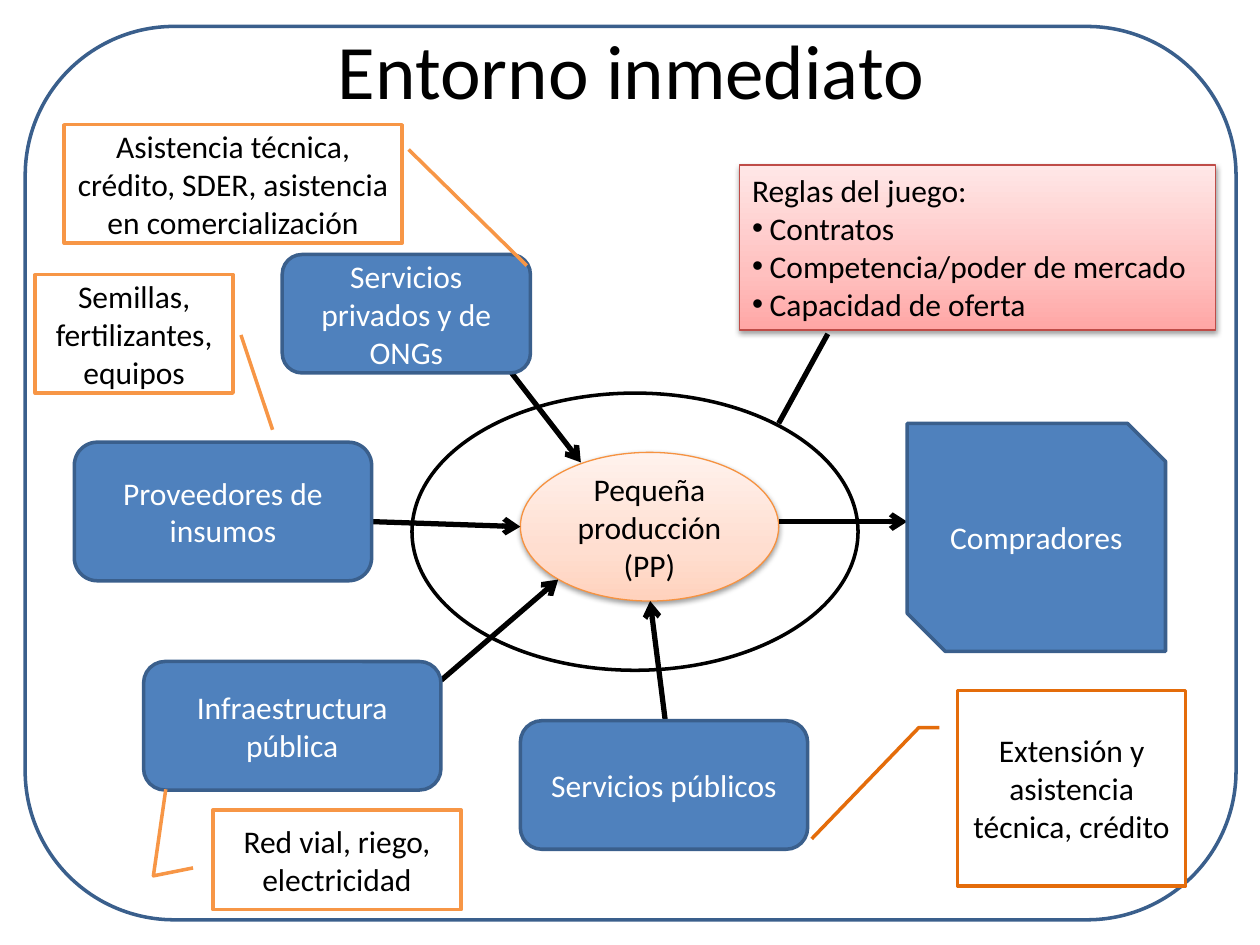
from copy import deepcopy
from dataclasses import dataclass

from lxml import etree
from pptx import Presentation
from pptx.dml.color import RGBColor
from pptx.enum import shapes, text
from pptx.oxml.ns import qn
from pptx.util import Pt

PX = 9144  # 100 px to the inch
SHAPE = shapes.MSO_SHAPE
CENTER, LEFT = text.PP_ALIGN.CENTER, text.PP_ALIGN.LEFT
MIDDLE, TOP = text.MSO_ANCHOR.MIDDLE, text.MSO_ANCHOR.TOP


@dataclass(frozen=True)
class Theme:
    font: str = "Calibri"
    title_size: int = 44
    body_size: int = 18
    black: str = "000000"
    white: str = "FFFFFF"
    blue: str = "4F81BD"
    navy: str = "3A5F8C"
    orange: str = "F79646"
    dark_orange: str = "E46C0A"
    core_line: str = "F69240"
    core_fill: tuple = ("FFD2BD", "FFDED0", "FFF2ED")
    rules_line: str = "BF4C48"
    rules_fill: tuple = ("FFA6A5", "FFC0BF", "FFE7E7")


@dataclass(frozen=True)
class Box:
    left: int
    top: int
    width: int
    height: int

    def inner(self, left, top, width, height):
        return Box(self.left + left, self.top + top, width, height)

    def point(self, x, y):
        return (self.left + x) * PX, (self.top + y) * PX

    def emu(self):
        return [length * PX for length in (self.left, self.top, self.width, self.height)]


THEME = Theme()


def rgb(value):
    return RGBColor.from_string(value)


def write(shape, content, color=THEME.black, size=THEME.body_size, align=CENTER, anchor=MIDDLE):
    frame = shape.text_frame
    frame.word_wrap = True
    frame.vertical_anchor = anchor
    frame.text = content
    for paragraph in frame.paragraphs:
        paragraph.alignment = align
        for run in paragraph.runs:
            run.font.name = THEME.font
            run.font.size = Pt(size)
            run.font.color.rgb = rgb(color)


def add_shape(slide, kind, box, line, fill=None, width=2):
    shape = slide.shapes.add_shape(kind, *box.emu())
    shape.shadow.inherit = False
    shape.line.color.rgb = rgb(line)
    shape.line.width = Pt(width)
    if fill:
        shape.fill.solid()
        shape.fill.fore_color.rgb = rgb(fill)
    else:
        shape.fill.background()
    return shape


def add_raised_shape(slide, kind, box, line, colors):
    """A shape with a three-stop gradient, lightest on top, and a soft shadow."""
    shape = add_shape(slide, kind, box, line, width=0.75)
    shape.fill.gradient()
    shape.fill.gradient_angle = 90
    properties = shape._element.spPr
    stops = properties.find(".//" + qn("a:gsLst"))
    stops.insert(1, deepcopy(stops[0]))
    for stop, position, color in zip(shape.fill.gradient_stops, (0, 0.35, 1), colors):
        stop.position = position
        stop.color.rgb = rgb(color)
    shadow = etree.SubElement(properties.find(qn("a:effectLst")), qn("a:outerShdw"),
                              blurRad="40000", dist="20000", dir="5400000", rotWithShape="0")
    shade = etree.SubElement(shadow, qn("a:srgbClr"), val=THEME.black)
    etree.SubElement(shade, qn("a:alpha"), val="38000")
    return shape


def add_line(slide, start, end, arrow=False):
    connector = slide.shapes.add_connector(shapes.MSO_CONNECTOR.STRAIGHT, *start, *end)
    connector.line.color.rgb = rgb(THEME.black)
    connector.line.width = Pt(3)
    if arrow:
        etree.SubElement(connector.line._get_or_add_ln(), qn("a:tailEnd"), type="arrow")
    etree.SubElement(connector._element.spPr, qn("a:effectLst"))


def draw_frame(slide, box):
    # Rounded border and title
    add_shape(slide, SHAPE.ROUNDED_RECTANGLE, box, THEME.navy)
    title = slide.shapes.add_textbox(*box.inner(31, -21, 900, 109).emu())
    write(title, "Entorno inmediato", size=THEME.title_size)


def draw_network(slide, box):
    # Small producers at the centre
    core = add_raised_shape(slide, SHAPE.OVAL, box.inner(354, 157, 205, 118),
                            THEME.core_line, THEME.core_fill)
    write(core, "Pequeña producción (PP)")

    # Arrows to and from the centre
    for start, end in (
        ((347, 94), (402, 165)),
        ((236, 212), (354, 216)),
        ((291, 338), (384, 258)),
        ((469, 370), (457, 275)),
        ((559, 212), (661, 212)),
    ):
        add_line(slide, box.point(*start), box.point(*end), arrow=True)

    # Actors
    rounded = SHAPE.ROUNDED_RECTANGLE
    for label, kind, place in (
        ("Servicios privados y de ONGs", rounded, (165, 0, 197, 94)),
        ("Proveedores de insumos", rounded, (0, 149, 236, 110)),
        ("Infraestructura pública", rounded, (55, 323, 236, 102)),
        ("Servicios públicos", rounded, (354, 370, 228, 102)),
        ("Compradores", SHAPE.SNIP_2_DIAG_RECTANGLE, (661, 134, 205, 181)),
    ):
        actor = add_shape(slide, kind, box.inner(*place), THEME.navy, THEME.blue)
        write(actor, label, THEME.white)

    # Ring around the centre
    add_shape(slide, SHAPE.OVAL, box.inner(268, 110, 354, 220), THEME.black)


def draw_rules(slide, box):
    # Line to the ring, then the panel with its bullets
    add_line(slide, box.point(31, 205), box.point(70, 134))
    panel = add_raised_shape(slide, SHAPE.RECTANGLE, box, THEME.rules_line, THEME.rules_fill)
    lines = ("Reglas del juego:", "Contratos", "Competencia/poder de mercado", "Capacidad de oferta")
    write(panel, "\n".join(lines), align=LEFT, anchor=TOP)
    for paragraph in panel.text_frame.paragraphs[1:]:
        properties = paragraph._p.get_or_add_pPr()
        properties.set("marL", str(14 * PX))
        properties.set("indent", str(-14 * PX))
        etree.SubElement(properties, qn("a:buFont"), typeface="Arial")
        etree.SubElement(properties, qn("a:buChar"), char="•")


def draw_callout(slide, box, label, color, leader):
    # The leader lists y, x pairs as fractions of the box
    kind = SHAPE.LINE_CALLOUT_1 if len(leader) == 4 else SHAPE.LINE_CALLOUT_2
    callout = add_shape(slide, kind, box, color, THEME.white)
    for index, value in enumerate(leader):
        callout.adjustments[index] = value
    write(callout, label)


def main():
    presentation = Presentation()
    presentation.slide_width, presentation.slide_height = 1000 * PX, 750 * PX
    slide = presentation.slides.add_slide(presentation.slide_layouts[6])

    draw_frame(slide, Box(20, 21, 961, 709))
    draw_network(slide, Box(59, 202, 866, 472))
    draw_rules(slide, Box(587, 131, 378, 131))
    for box, label, color, leader in (
        (Box(51, 99, 268, 94), "Asistencia técnica, crédito, SDER, asistencia en comercialización",
         THEME.orange, (0.21, 1.02, 1.19, 1.37)),
        (Box(760, 548, 181, 155), "Extensión y asistencia técnica, crédito",
         THEME.dark_orange, (0.19, -0.08, 0.19, -0.17, 0.76, -0.64)),
        (Box(28, 218, 157, 94), "Semillas, fertilizantes, equipos",
         THEME.orange, (0.51, 1.04, 1.31, 1.2)),
        (Box(169, 643, 197, 79), "Red vial, riego, electricidad",
         THEME.orange, (0.58, -0.08, 0.66, -0.24, -0.21, -0.19)),
    ):
        draw_callout(slide, box, label, color, leader)

    presentation.save("out.pptx")


if __name__ == "__main__":
    main()
